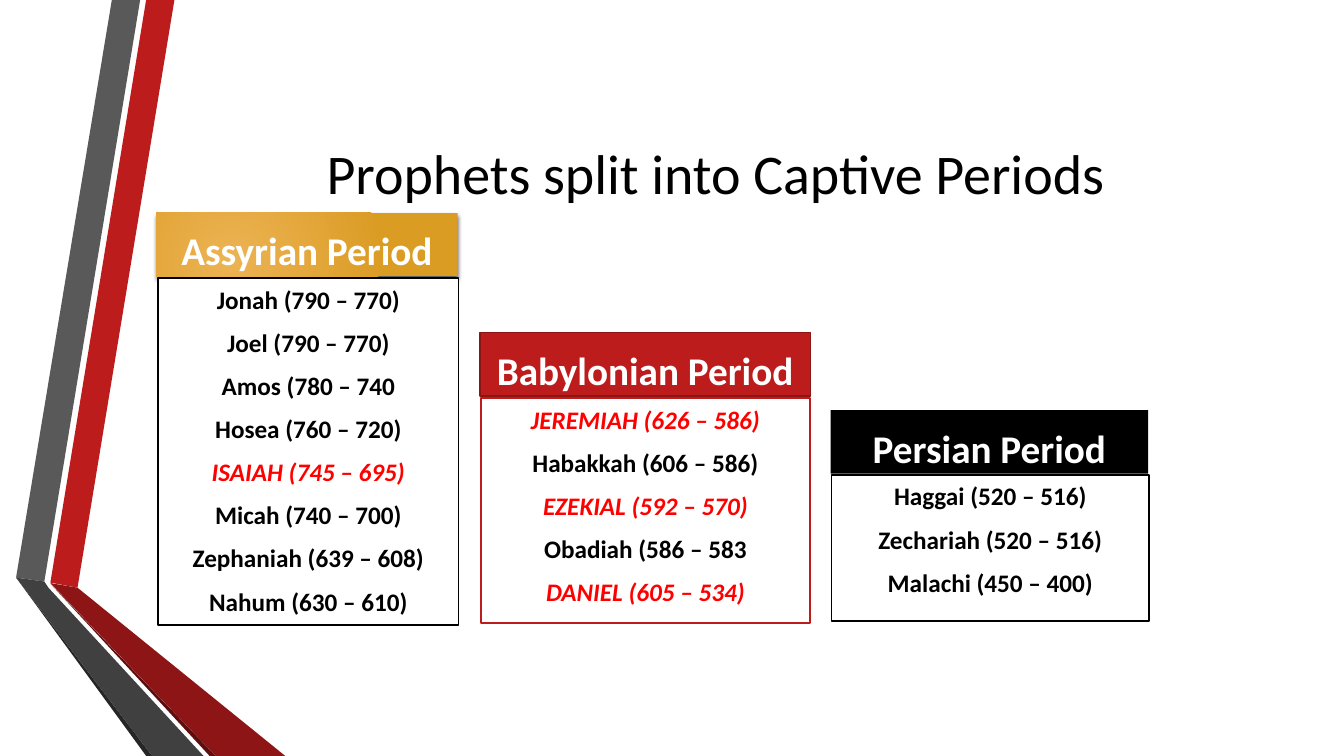
import pptx
import pptx.dml.color
import pptx.enum.text
import pptx.util
from lxml import etree
from pptx.oxml.ns import qn

Pt = pptx.util.Pt
ANCHOR = pptx.enum.text.MSO_ANCHOR
CENTER = pptx.enum.text.PP_ALIGN.CENTER

THEME = {
    "font": "Calibri",
    "title_size": 40, "header_size": 28, "name_size": 18,
    "black": "000000", "white": "FFFFFF", "highlight": "FF0000",
    "red": "BC1C1C", "red_edge": "8B1515", "maroon": "8D1515", "dark_red": "5E0E0E",
    "gray": "595959", "dark_gray": "404040", "charcoal": "262626",
    "gold": "DB9C24", "light_gold": "ECB354",
}


def color(name):
    return pptx.dml.color.RGBColor.from_string(THEME[name])


def style_shape(shape, fill, line=None):
    shape.shadow.inherit = False
    shape.fill.solid()
    shape.fill.fore_color.rgb = color(fill)
    if line:
        shape.line.color.rgb = color(line)
        shape.line.width = Pt(1.25)
    else:
        shape.line.fill.background()


presentation = pptx.Presentation()
presentation.slide_width, presentation.slide_height = Pt(960), Pt(540)
slide = presentation.slides.add_slide(presentation.slide_layouts[5])

# Folded ribbons on the left
ribbons = [
    ("red", [(36, 416.2), (55.4, 419.8), (124.6, 0), (104.4, 0)]),
    ("gray", [(100.1, 0), (79.9, 0), (11.5, 412.6), (31.7, 415.4)]),
    ("charcoal", [(11.5, 412.6), (104.4, 540), (108.7, 540)]),
    ("dark_red", [(36, 416.9), (149.8, 540), (154.1, 540)]),
    ("maroon", [(36, 416.5), (154.1, 540), (203.8, 540), (55.4, 419.8)]),
    ("dark_gray", [(145.4, 540), (34.6, 419.8), (31.7, 415.4), (11.5, 412.6), (108.7, 540)]),
]
for fill, corners in ribbons:
    points = [(Pt(x), Pt(y)) for x, y in corners]
    builder = slide.shapes.build_freeform(*points[0])
    builder.add_line_segments(points[1:], close=True)
    style_shape(builder.convert_to_shape(), fill)

# Title
title = slide.shapes.title
title.left, title.top, title.width, title.height = Pt(116.6), Pt(54), Pt(789), Pt(138)
title.text_frame.text = "Prophets split into Captive Periods"
title.text_frame.vertical_anchor = ANCHOR.MIDDLE
title.text_frame.paragraphs[0].alignment = CENTER
title_format = {"name": THEME["font"], "size": Pt(THEME["title_size"])}
for attribute, value in title_format.items():
    setattr(title.text_frame.paragraphs[0].font, attribute, value)
title.text_frame.paragraphs[0].font.color.rgb = color("black")

# Periods: heading, its box, fill and edge, list box and edge, prophets
periods = [
    ("Assyrian Period", (111.6, 151.9, 215.3, 45.4), "gold", None,
     (113, 198.7, 214.6, 247.7), "black",
     ["Jonah (790 – 770)", "Joel (790 – 770)", "Amos (780 – 740", "Hosea (760 – 720)",
      "ISAIAH (745 – 695)", "Micah (740 – 700)", "Zephaniah (639 – 608)",
      "Nahum (630 – 610)"]),
    ("Babylonian Period", (342.7, 237.6, 236.2, 45.4), "red", "red_edge",
     (343.4, 284.4, 235.4, 160.6), "red",
     ["JEREMIAH (626 – 586)", "Habakkah (606 – 586)", "EZEKIAL (592 – 570)",
      "Obadiah (586 – 583", "DANIEL (605 – 534)"]),
    ("Persian Period", (593.3, 293, 226.8, 45.4), "black", None,
     (594, 339.1, 226.8, 104.4), "black",
     ["Haggai (520 – 516)", "Zechariah (520 – 516)", "Malachi (450 – 400)"]),
]
for heading, header_box, fill, edge, list_box, list_edge, prophets in periods:
    parts = [
        (header_box, fill, edge, [heading], "header_size", "white", ANCHOR.BOTTOM),
        (list_box, "white", list_edge, prophets, "name_size", "black", ANCHOR.TOP),
    ]
    for box, part_fill, part_edge, lines, size, text_color, anchor in parts:
        shape = slide.shapes.add_shape(
            pptx.enum.shapes.MSO_SHAPE.RECTANGLE, *[Pt(length) for length in box])
        style_shape(shape, part_fill, part_edge)
        frame = shape.text_frame
        frame_format = {"word_wrap": True, "vertical_anchor": anchor,
                        "margin_top": Pt(4.3), "margin_bottom": Pt(2)}
        for attribute, value in frame_format.items():
            setattr(frame, attribute, value)
        frame.text = "\n".join(lines)
        for paragraph in frame.paragraphs:
            paragraph.alignment = CENTER
            # The main prophets are written in capitals
            major = paragraph.text.split()[0].isupper()
            if len(lines) > 1:
                paragraph.space_after = Pt(9.2)
            font_format = {"name": THEME["font"], "size": Pt(THEME[size]),
                           "bold": True, "italic": major}
            for attribute, value in font_format.items():
                setattr(paragraph.font, attribute, value)
            paragraph.font.color.rgb = color("highlight" if major else text_color)

        # Gold heading: radial gradient and soft shadow
        if part_fill == "gold":
            shape.fill.gradient()
            for stop, name in zip(shape.fill.gradient_stops, ("light_gold", "gold")):
                stop.color.rgb = color(name)
            properties = shape.fill._xPr
            gradient = properties.find(qn("a:gradFill"))
            gradient.remove(gradient.find(qn("a:lin")))
            circle = etree.SubElement(gradient, qn("a:path"), {"path": "circle"})
            etree.SubElement(circle, qn("a:fillToRect"),
                             {"l": "50000", "t": "100000", "r": "100000", "b": "50000"})
            shadow = etree.SubElement(
                properties.find(qn("a:effectLst")), qn("a:outerShdw"),
                {"blurRad": str(Pt(3)), "dist": str(Pt(2)), "dir": "5400000"})
            shade = etree.SubElement(shadow, qn("a:srgbClr"), {"val": THEME["black"]})
            etree.SubElement(shade, qn("a:alpha"), {"val": "64000"})

presentation.save("out.pptx")
